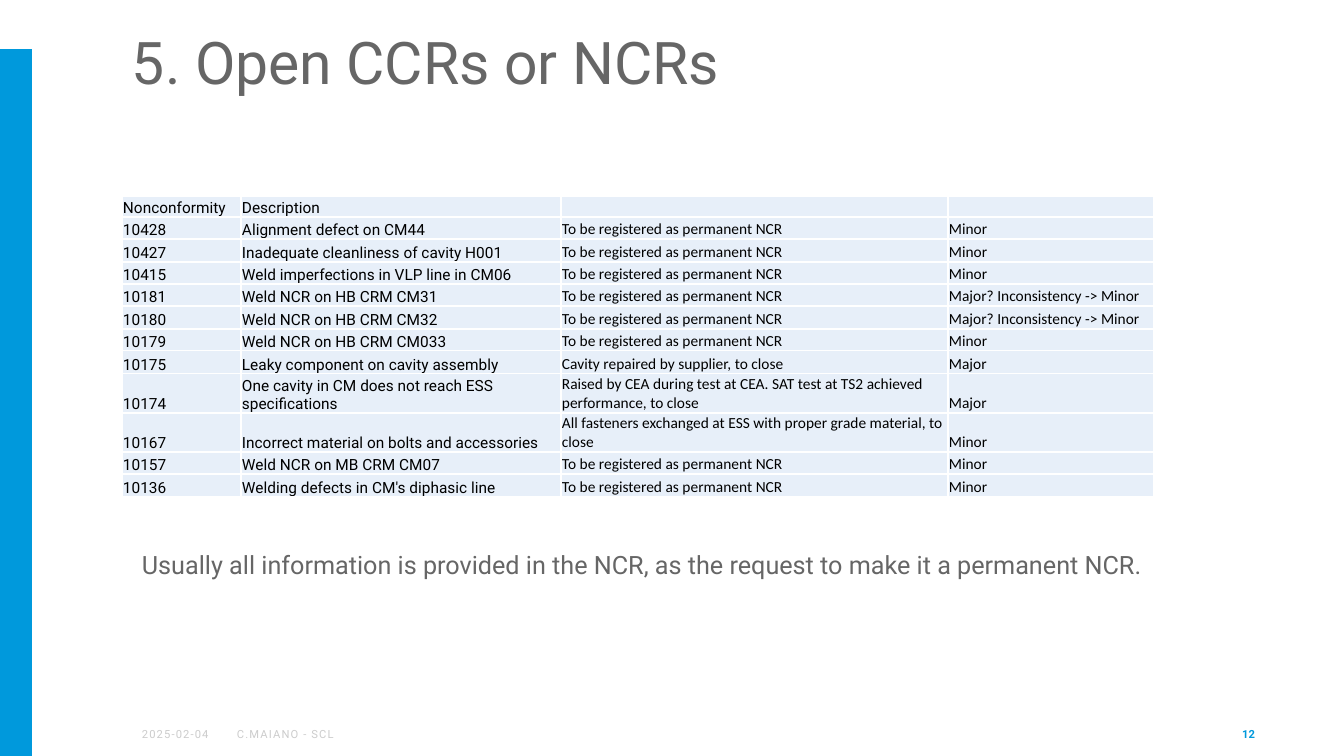
import dataclasses
import typing

import lxml.etree
import pptx
import pptx.dml.color
import pptx.enum.shapes
import pptx.enum.text
import pptx.oxml.ns
import pptx.util

PX = 914400 / 100.8  # EMU in one px

BLUE = pptx.dml.color.RGBColor(0x00, 0x99, 0xDC)
GREY = pptx.dml.color.RGBColor(0x66, 0x66, 0x66)
PALE_GREY = pptx.dml.color.RGBColor(0xCC, 0xCC, 0xCC)
BLACK = pptx.dml.color.RGBColor(0x00, 0x00, 0x00)
CELL_BLUE = pptx.dml.color.RGBColor(0xE7, 0xEF, 0xF9)
WHITE = pptx.dml.color.RGBColor(0xFF, 0xFF, 0xFF)

TOP = pptx.enum.text.MSO_ANCHOR.TOP
MIDDLE = pptx.enum.text.MSO_ANCHOR.MIDDLE
LEFT = pptx.enum.text.PP_ALIGN.LEFT
RIGHT = pptx.enum.text.PP_ALIGN.RIGHT


@dataclasses.dataclass(frozen=True)
class Style:
    size: int
    color: pptx.dml.color.RGBColor
    font: str = "Roboto"
    bold: bool = False
    spacing: int = 0  # hundredths of a point


@dataclasses.dataclass(frozen=True)
class Label:
    text: str
    left: int
    top: int
    width: int
    height: int
    style: Style
    anchor: pptx.enum.text.MSO_ANCHOR = MIDDLE
    align: pptx.enum.text.PP_ALIGN = LEFT
    wrap: bool = True


@dataclasses.dataclass(frozen=True)
class Nonconformity:
    number: str
    description: str
    action: str = "To be registered as permanent NCR"
    severity: str = "Minor"
    height: int = 22


TITLE = Style(42, GREY)
FOOTER = Style(8, PALE_GREY, spacing=80)
ROBOTO_CELL = Style(11, BLACK)
CALIBRI_CELL = Style(11, BLACK, "Calibri")
COLUMN_STYLES = (ROBOTO_CELL, ROBOTO_CELL, CALIBRI_CELL, CALIBRI_CELL)
COLUMN_WIDTHS = (119, 320, 387, 206)

LABELS = (
    Label("C.MAIANO - SCL", 227, 714, 476, 40, FOOTER),
    Label("12", 963, 714, 302, 40, Style(8, BLUE, bold=True), align=RIGHT),
    Label("2025-02-04", 132, 714, 92, 40, FOOTER),
    Label("Usually all information is provided in the NCR, "
          "as the request to make it a permanent NCR.",
          132, 544, 1024, 40, Style(18, GREY), anchor=TOP, wrap=False),
)

INCONSISTENT = "Major? Inconsistency -> Minor"
ROWS = (
    Nonconformity("Nonconformity", "Description", "", "", height=21),
    Nonconformity("10428", "Alignment defect on CM44"),
    Nonconformity("10427", "Inadequate cleanliness of cavity H001", height=23),
    Nonconformity("10415", "Weld imperfections in VLP line in CM06"),
    Nonconformity("10181", "Weld NCR on HB CRM CM31", severity=INCONSISTENT),
    Nonconformity("10180", "Weld NCR on HB CRM CM32", severity=INCONSISTENT, height=23),
    Nonconformity("10179", "Weld NCR on HB CRM CM033"),
    Nonconformity("10175", "Leaky component on cavity assembly",
                  "Cavity repaired by supplier, to close", "Major", 23),
    Nonconformity("10174", "One cavity in CM does not reach ESS specifications",
                  "Raised by CEA during test at CEA. SAT test at TS2 achieved "
                  "performance, to close", "Major", 39),
    Nonconformity("10167", "Incorrect material on bolts and accessories",
                  "All fasteners exchanged at ESS with proper grade material, "
                  "to close", height=39),
    Nonconformity("10157", "Weld NCR on MB CRM CM07"),
    Nonconformity("10136", "Welding defects in CM's diphasic line", height=23),
)


def px(*lengths: int) -> typing.List[pptx.util.Emu]:
    return [pptx.util.Emu(round(length * PX)) for length in lengths]


def add_span(para: typing.Any, text: str, style: Style) -> None:
    span = para.add_run()
    span.text = text
    span.font.size = pptx.util.Pt(style.size)
    span.font.name = style.font
    span.font.bold = style.bold
    span.font.color.rgb = style.color
    if style.spacing:
        span.font._element.set("spc", str(style.spacing))


def add_label(page: typing.Any, label: Label) -> None:
    box = page.shapes.add_textbox(*px(label.left, label.top, label.width, label.height))
    frame = box.text_frame
    frame.word_wrap = label.wrap
    frame.vertical_anchor = label.anchor
    para = frame.paragraphs[0]
    para.alignment = label.align
    add_span(para, label.text, label.style)


def add_borders(cell: typing.Any) -> None:
    properties = cell._tc.get_or_add_tcPr()
    for side in ("a:lnL", "a:lnR", "a:lnT", "a:lnB"):
        line = lxml.etree.SubElement(properties, pptx.oxml.ns.qn(side), w="12700")
        fill = lxml.etree.SubElement(line, pptx.oxml.ns.qn("a:solidFill"))
        lxml.etree.SubElement(fill, pptx.oxml.ns.qn("a:srgbClr"), val=str(WHITE))


def fill_cell(cell: typing.Any, text: str, style: Style) -> None:
    add_borders(cell)
    cell.fill.solid()
    cell.fill.fore_color.rgb = CELL_BLUE
    cell.vertical_anchor = pptx.enum.text.MSO_ANCHOR.BOTTOM
    cell.margin_left, cell.margin_top, cell.margin_right, cell.margin_bottom = px(1, 1, 1, 0)
    para = cell.text_frame.paragraphs[0]
    if text:
        add_span(para, text, style)
    else:  # keeps an empty cell from stretching its row
        lxml.etree.SubElement(para._p, pptx.oxml.ns.qn("a:endParaRPr"),
                              sz=str(style.size * 100))


def add_ncr_table(page: typing.Any) -> None:
    size = (sum(COLUMN_WIDTHS), sum(row.height for row in ROWS))
    table = page.shapes.add_table(len(ROWS), len(COLUMN_WIDTHS), *px(122, 196, *size)).table
    table.first_row = False
    table.horz_banding = False
    for column, width in zip(table.columns, px(*COLUMN_WIDTHS)):
        column.width = width
    for table_row, row in zip(table.rows, ROWS):
        table_row.height = px(row.height)[0]
        texts = (row.number, row.description, row.action, row.severity)
        for cell, text, style in zip(table_row.cells, texts, COLUMN_STYLES):
            fill_cell(cell, text, style)


def add_title(page: typing.Any) -> None:
    title = page.shapes.title
    title.left, title.top, title.width, title.height = px(122, 29, 1032, 73)
    frame = title.text_frame
    frame.word_wrap = True
    frame.auto_size = pptx.enum.text.MSO_AUTO_SIZE.NONE
    frame.vertical_anchor = TOP
    frame.margin_left, frame.margin_top, frame.margin_right, frame.margin_bottom = px(10, 5, 10, 2)
    para = frame.paragraphs[0]
    para.alignment = LEFT
    para.line_spacing = 0.9
    add_span(para, "5. Open CCRs or NCRs", TITLE)


def add_side_bar(page: typing.Any) -> None:
    bar = page.shapes.add_shape(pptx.enum.shapes.MSO_SHAPE.RECTANGLE, *px(0, 49, 32, 707))
    bar.shadow.inherit = False
    bar.fill.solid()
    bar.fill.fore_color.rgb = BLUE
    bar.line.fill.background()


def main() -> None:
    deck = pptx.Presentation()
    deck.slide_width, deck.slide_height = px(1344, 756)
    page = deck.slides.add_slide(deck.slide_layouts[5])  # title only

    # Frame of the page
    add_side_bar(page)
    add_title(page)

    # Content
    add_ncr_table(page)
    for label in LABELS:
        add_label(page, label)

    deck.save("out.pptx")


if __name__ == "__main__":
    main()
